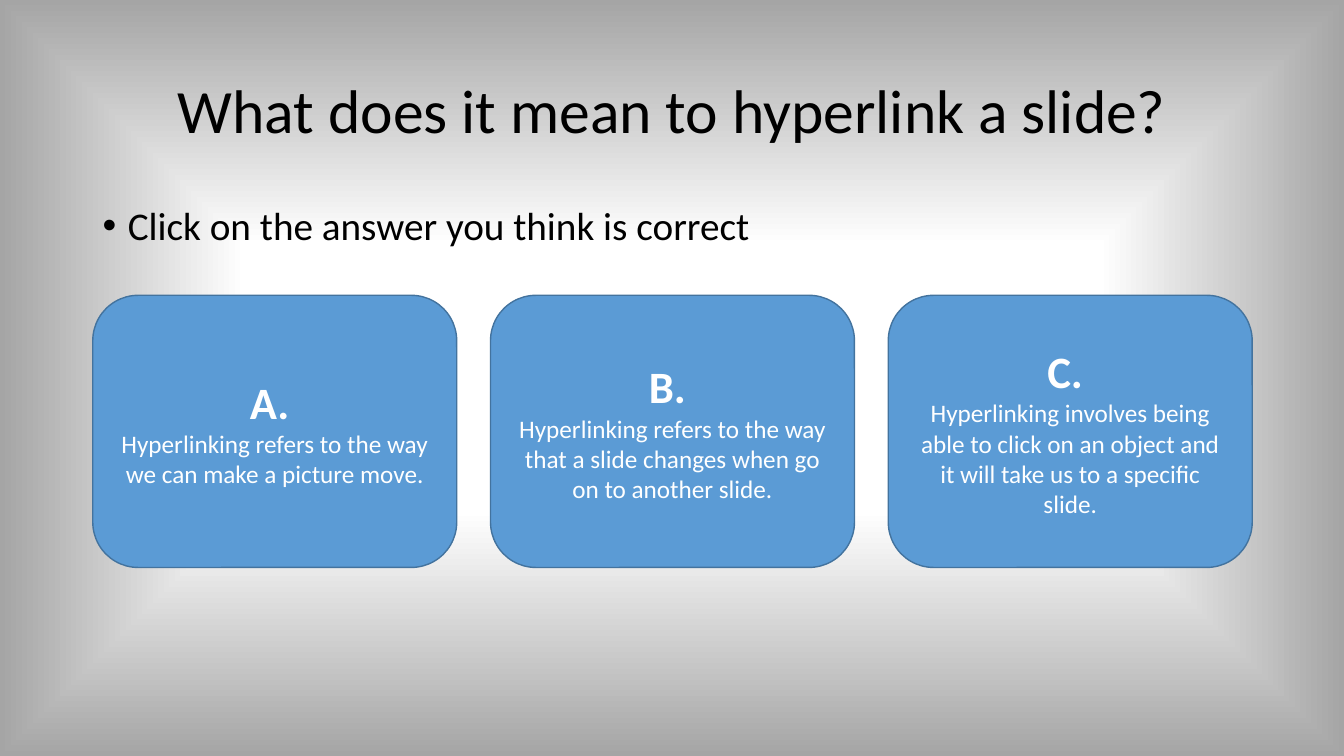
from dataclasses import dataclass

from lxml import etree
from pptx import Presentation
from pptx.dml.color import RGBColor
from pptx.enum.shapes import MSO_SHAPE
from pptx.enum.text import MSO_ANCHOR, PP_ALIGN
from pptx.oxml import parse_xml
from pptx.oxml.ns import nsdecls, qn
from pptx.util import Inches, Pt

ROUNDED = MSO_SHAPE.ROUNDED_RECTANGLE
MIDDLE = MSO_ANCHOR.MIDDLE
TOP = MSO_ANCHOR.TOP
CENTER = PP_ALIGN.CENTER
LEFT = PP_ALIGN.LEFT


@dataclass(frozen=True)
class Theme:
    font: str = "Calibri"
    ink: str = "000000"
    light: str = "FFFFFF"
    edge: str = "A5A5A5"
    card: str = "5B9BD5"
    outline: str = "43739E"
    title: int = 44
    prompt: int = 28
    letter: int = 32
    answer: int = 18


THEME = Theme()
WIDTH, HEIGHT = 13.33, 7.5
MARGIN, CONTENT = 0.92, 11.5
CARD_WIDTH = 3.61
QUESTION = "What does it mean to hyperlink a slide?"
PROMPT = "Click on the answer you think is correct"
ANSWERS = [
    ("A. ", "Hyperlinking refers to the way we can make a picture move."),
    ("B. ", "Hyperlinking refers to the way that a slide changes when go on to another slide."),
    ("C. ", "Hyperlinking involves being able to click on an object and it will take us to a specific slide."),
]


def set_background(slide):
    """Fade from a light centre to darker edges."""
    stops = "".join(
        f'<a:gs pos="{share * 1000}"><a:srgbClr val="{color}"/></a:gs>'
        for share, color in ((0, THEME.light), (35, THEME.light), (100, THEME.edge)))
    bg = parse_xml(
        f'<p:bg {nsdecls("p", "a")}><p:bgPr><a:gradFill rotWithShape="1">'
        f'<a:gsLst>{stops}</a:gsLst><a:path path="shape">'
        '<a:fillToRect l="50000" t="50000" r="50000" b="50000"/></a:path>'
        '</a:gradFill><a:effectLst/></p:bgPr></p:bg>')
    slide.element.cSld.insert(0, bg)


def write(p, text, size, color, bold=False, **layout):
    """Fill a paragraph with one run and apply paragraph formats."""
    for name, value in layout.items():
        setattr(p, name, value)
    r = p.add_run()
    r.text = text
    for name, value in {"name": THEME.font, "size": Pt(size), "bold": bold}.items():
        setattr(r.font, name, value)
    r.font.color.rgb = RGBColor.from_string(color)


def add_text(slide, box, anchor, text, size, **layout):
    sp = slide.shapes.add_textbox(*map(Inches, box))
    tf = sp.text_frame
    tf.word_wrap = True
    tf.vertical_anchor = anchor
    p = tf.paragraphs[0]
    write(p, text, size, THEME.ink, line_spacing=0.9, **layout)
    return p


def add_bullet(p, indent):
    pPr = p._p.get_or_add_pPr()
    pPr.set("marL", str(Inches(indent)))
    pPr.set("indent", str(-Inches(indent)))
    etree.SubElement(pPr, qn("a:buFont")).set("typeface", "Arial")
    etree.SubElement(pPr, qn("a:buChar")).set("char", "•")


def add_answer(slide, box, letter, answer):
    sp = slide.shapes.add_shape(ROUNDED, *map(Inches, box))
    sp.shadow.inherit = False
    sp.fill.solid()
    sp.fill.fore_color.rgb = RGBColor.from_string(THEME.card)
    sp.line.color.rgb = RGBColor.from_string(THEME.outline)
    sp.line.width = Pt(1)
    tf = sp.text_frame
    tf.word_wrap = True
    tf.vertical_anchor = MIDDLE
    write(tf.paragraphs[0], letter, THEME.letter, THEME.light, True, alignment=CENTER)
    write(tf.add_paragraph(), answer, THEME.answer, THEME.light, alignment=CENTER)


def add_answers(slide, box):
    """Spread the answer cards evenly across the box."""
    left, top, width, height = box
    step = (width - CARD_WIDTH) / (len(ANSWERS) - 1)
    for i, (letter, answer) in enumerate(ANSWERS):
        add_answer(slide, (left + i * step, top, CARD_WIDTH, height), letter, answer)


def build_quiz_slide(prs):
    slide = prs.slides.add_slide(prs.slide_layouts[6])
    set_background(slide)
    add_text(slide, (MARGIN, 0.4, CONTENT, 1.45), MIDDLE, QUESTION, THEME.title,
             alignment=CENTER)
    prompt = add_text(slide, (MARGIN, 2, CONTENT, 4.76), TOP, PROMPT, THEME.prompt,
                      alignment=LEFT, space_before=Pt(10))
    add_bullet(prompt, 0.25)
    add_answers(slide, (MARGIN, 2.93, CONTENT, 2.7))


def main():
    prs = Presentation()
    prs.slide_width, prs.slide_height = Inches(WIDTH), Inches(HEIGHT)
    build_quiz_slide(prs)
    prs.save("out.pptx")


if __name__ == "__main__":
    main()
